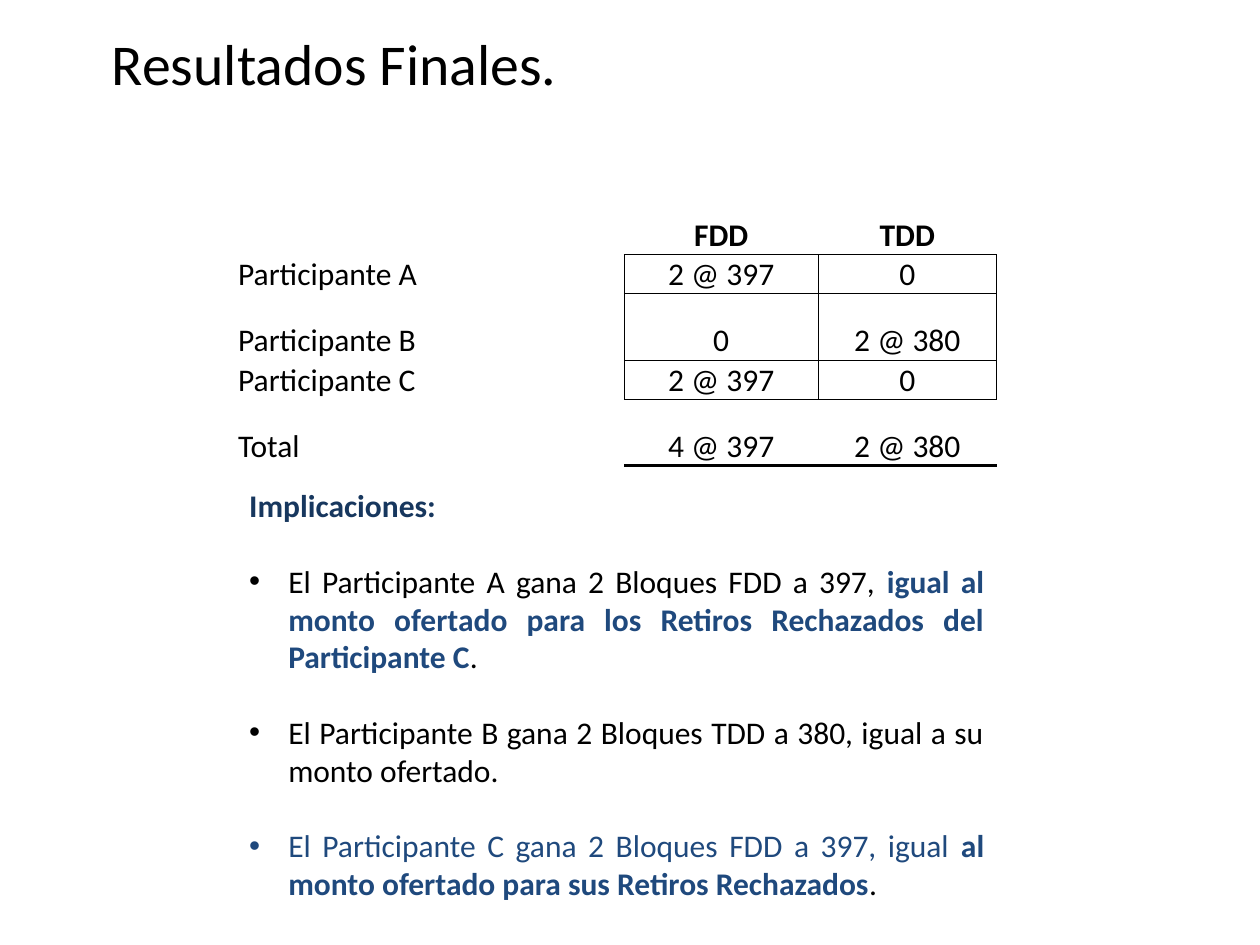
import dataclasses

import lxml.etree
import pptx
import pptx.dml.color
import pptx.enum.text
import pptx.oxml.ns
import pptx.util

SLIDE_WIDTH = pptx.util.Inches(10)
SLIDE_HEIGHT = pptx.util.Inches(7.5)
FONT = "Calibri"
BODY_SIZE = 18
BLACK, NAVY, BLUE = "000000", "17375E", "1F497D"
PLAIN_TABLE_STYLE = "{2D5ABB26-0587-4C30-8999-92F81FD0307C}"
ALIGN = pptx.enum.text.PP_ALIGN
ANCHOR = pptx.enum.text.MSO_ANCHOR


@dataclasses.dataclass
class Area:
    """A rectangle in shares of the slide's size."""
    left: float
    top: float
    width: float
    height: float

    def lengths(self) -> tuple[int, int, int, int]:
        return (int(self.left * SLIDE_WIDTH), int(self.top * SLIDE_HEIGHT),
                int(self.width * SLIDE_WIDTH), int(self.height * SLIDE_HEIGHT))


@dataclasses.dataclass
class Piece:
    text: str
    color: str = BLACK
    bold: bool = False


@dataclasses.dataclass
class Line:
    pieces: list[Piece]
    bullet: bool = True


TITLE_AREA = Area(0.079, 0.016, 0.9, 0.167)
TABLE_AREA = Area(0.188, 0.228, 0.603, 0.265)
NOTES_AREA = Area(0.188, 0.468, 0.603, 0.499)

COLUMN_SHARES = [0.51, 0.255, 0.235]
SHORT_ROW, TALL_ROW = 0.156, 0.266
ROW_SHARES = [SHORT_ROW, SHORT_ROW, TALL_ROW, SHORT_ROW, TALL_ROW]
RESULTS = [
    ["", "FDD", "TDD"],
    ["Participante A", "2 @ 397", "0"],
    ["Participante B", "0", "2 @ 380"],
    ["Participante C", "2 @ 397", "0"],
    ["Total", "4 @ 397", "2 @ 380"],
]

IMPLICATIONS = [
    Line([Piece("Implicaciones:", NAVY, True)], bullet=False),
    Line([Piece("El Participante A gana 2 Bloques FDD a 397, "),
          Piece("igual al monto ofertado para los Retiros Rechazados del Participante C", BLUE, True),
          Piece(".")]),
    Line([Piece("El Participante B gana 2 Bloques TDD a 380, igual a su monto ofertado.")]),
    Line([Piece("El Participante C gana 2 Bloques FDD a 397, igual ", BLUE),
          Piece("al monto ofertado para sus Retiros Rechazados", BLUE, True),
          Piece(".")]),
]


def rgb(color: str) -> pptx.dml.color.RGBColor:
    return pptx.dml.color.RGBColor.from_string(color)


def add_piece(paragraph, piece: Piece, size: float = BODY_SIZE) -> None:
    run = paragraph.add_run()
    run.text = piece.text
    run.font.name = FONT
    run.font.size = pptx.util.Pt(size)
    run.font.bold = piece.bold
    run.font.color.rgb = rgb(piece.color)


def add_text_frame(slide, area: Area, top_margin: float):
    text_frame = slide.shapes.add_textbox(*area.lengths()).text_frame
    text_frame.word_wrap = True
    text_frame.margin_top = pptx.util.Inches(top_margin)
    return text_frame


def add_bullet(paragraph) -> None:
    indent = pptx.util.Inches(0.31)
    properties = paragraph._p.get_or_add_pPr()
    properties.set("marL", str(indent))
    properties.set("indent", str(-indent))
    for tag, name, value in [("a:buFont", "typeface", "Arial"), ("a:buChar", "char", "•")]:
        element = lxml.etree.SubElement(properties, pptx.oxml.ns.qn(tag))
        element.set(name, value)


def set_border(cell, side: str, points: float) -> None:
    properties = cell._tc.get_or_add_tcPr()
    line = lxml.etree.SubElement(properties, pptx.oxml.ns.qn(f"a:ln{side}"))
    line.set("w", str(pptx.util.Pt(points)))
    fill = lxml.etree.SubElement(line, pptx.oxml.ns.qn("a:solidFill"))
    lxml.etree.SubElement(fill, pptx.oxml.ns.qn("a:srgbClr")).set("val", BLACK)


def fill_cell(cell, text: str, row: int, column: int) -> None:
    last_row = len(RESULTS) - 1
    # Results are boxed; the total is underlined
    if column > 0 and 0 < row < last_row:
        for side in "LRTB":
            set_border(cell, side, 0.5)
    elif column > 0 and row == last_row:
        set_border(cell, "B", 2)
    cell.fill.background()
    cell.margin_left = cell.margin_right = cell.margin_top = pptx.util.Inches(0.01)
    cell.margin_bottom = 0
    cell.vertical_anchor = ANCHOR.BOTTOM
    paragraph = cell.text_frame.paragraphs[0]
    paragraph.alignment = ALIGN.CENTER if column else ALIGN.LEFT
    if text:
        add_piece(paragraph, Piece(text, bold=row == 0))


def add_results_table(slide) -> None:
    frame = slide.shapes.add_table(len(RESULTS), len(COLUMN_SHARES), *TABLE_AREA.lengths())
    width, height = frame.width, frame.height
    table = frame.table
    table.first_row = table.horz_banding = False
    table._tbl.tblPr.find(pptx.oxml.ns.qn("a:tableStyleId")).text = PLAIN_TABLE_STYLE
    for column, share in zip(table.columns, COLUMN_SHARES):
        column.width = int(width * share)
    for row, share in zip(table.rows, ROW_SHARES):
        row.height = int(height * share)
    for row, texts in enumerate(RESULTS):
        for column, text in enumerate(texts):
            fill_cell(table.cell(row, column), text, row, column)


def add_implications(slide) -> None:
    text_frame = add_text_frame(slide, NOTES_AREA, top_margin=0.35)
    for index, line in enumerate(IMPLICATIONS):
        paragraph = text_frame.add_paragraph() if index else text_frame.paragraphs[0]
        paragraph.alignment = ALIGN.JUSTIFY
        if index:
            paragraph.space_before = pptx.util.Pt(21.6)
        if line.bullet:
            add_bullet(paragraph)
        for piece in line.pieces:
            add_piece(paragraph, piece)


def main() -> None:
    presentation = pptx.Presentation()
    presentation.slide_width, presentation.slide_height = SLIDE_WIDTH, SLIDE_HEIGHT
    slide = presentation.slides.add_slide(presentation.slide_layouts[6])

    # Title
    title = add_text_frame(slide, TITLE_AREA, top_margin=0.1)
    add_piece(title.paragraphs[0], Piece("Resultados Finales."), size=33)

    # Implications below the results table
    add_implications(slide)
    add_results_table(slide)

    presentation.save("out.pptx")


if __name__ == "__main__":
    main()
